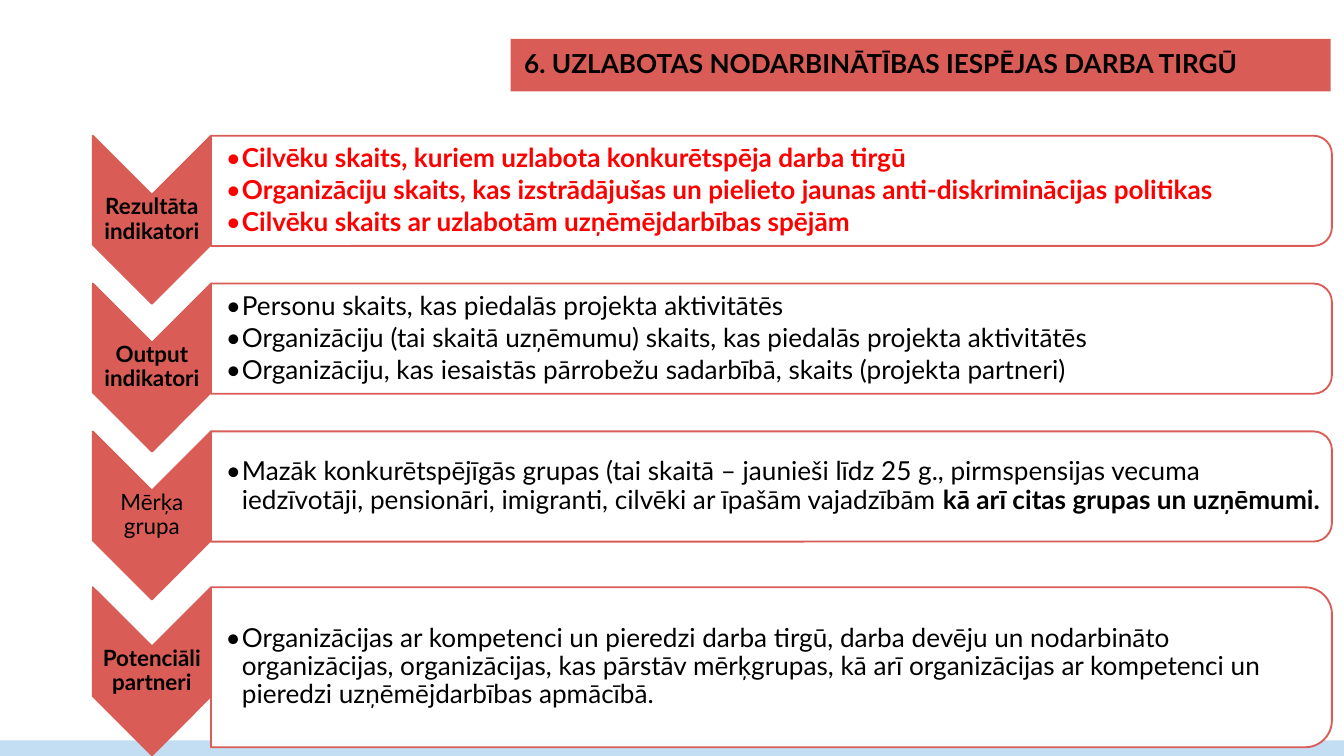
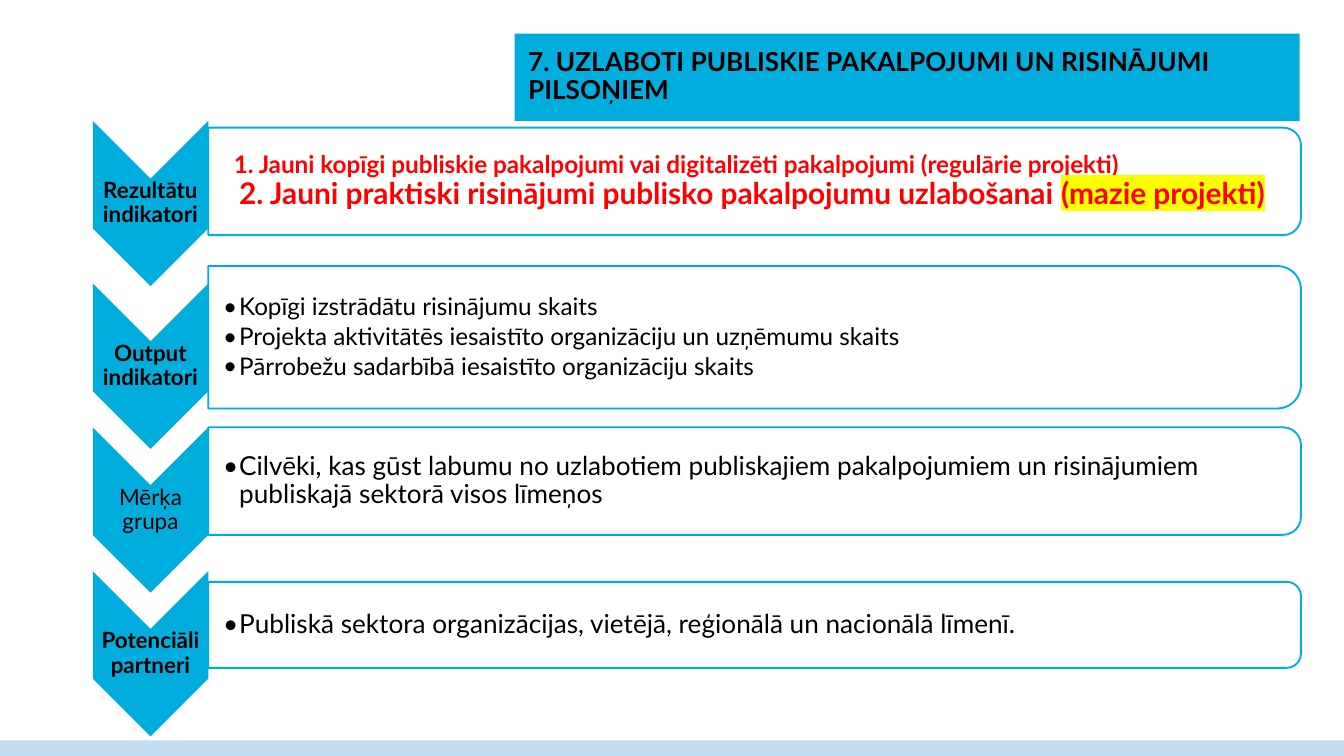
from dataclasses import dataclass

from lxml.etree import SubElement
from pptx import Presentation
from pptx.dml.color import RGBColor
from pptx.enum.shapes import MSO_SHAPE
from pptx.enum.text import MSO_ANCHOR, MSO_AUTO_SIZE, PP_ALIGN
from pptx.oxml import parse_xml
from pptx.oxml.ns import nsdecls, qn
from pptx.util import Inches, Pt

FONT = "Lato"
BLACK, WHITE, RED, YELLOW = "000000", "FFFFFF", "FF0000", "FFFF00"
CORAL, CYAN, BAND = "DA5C57", "00ADDC", "C3DEF2"
CHEVRON_LEFT = 0.69
HANGING = 0.12


@dataclass
class Run:
    """A stretch of text with its own formatting."""
    text: str
    size: float = 14
    bold: bool = False
    color: str = BLACK
    highlight: str = ""


@dataclass
class Row:
    """A chevron label and the panel beside it."""
    label: list
    chevron_top: float
    panel_top: float
    panel_height: float
    paragraphs: list
    label_bold: bool = True
    bulleted: bool = True


@dataclass
class Design:
    """The colour and the measures of one slide."""
    color: str
    title_box: tuple
    chevron_size: tuple
    panel_width: float
    outlined_chevrons: bool


def rgb(color):
    """Turn a hex string into a colour."""
    return RGBColor.from_string(color)


def add_run(paragraph, run):
    """Append one formatted run to a paragraph."""
    text_run = paragraph.add_run()
    text_run.text = run.text
    font = text_run.font
    font.name, font.size, font.bold = FONT, Pt(run.size), run.bold
    font.color.rgb = rgb(run.color)
    if run.highlight:
        fill = font._element.find(qn("a:solidFill"))
        fill.addnext(parse_xml(
            f'<a:highlight {nsdecls("a")}><a:srgbClr val="{run.highlight}"/></a:highlight>'))


def write_lines(paragraph, lines):
    """Write lists of runs, one list per line, into one paragraph."""
    for number, runs in enumerate(lines):
        if number:
            paragraph.add_line_break()
        for run in runs:
            add_run(paragraph, run)


def space_paragraph(paragraph, size, share):
    """Set tight lines and a gap after, as a share of the text size."""
    paragraph.line_spacing = 0.9
    paragraph.space_after = Pt(round(size * share, 1))


def indent(paragraph, first_line, bulleted):
    """Give a paragraph its hanging indent and, if wanted, a bullet."""
    properties = paragraph._p.get_or_add_pPr()
    properties.set("marL", str(Inches(HANGING)))
    properties.set("indent", str(Inches(first_line)))
    if bulleted:
        SubElement(properties, qn("a:buFont"), typeface=FONT)
        SubElement(properties, qn("a:buChar"), char="•")


def prepare_frame(frame, left_inset, inset):
    """Wrap a text frame, centre it vertically and set its margins."""
    frame.word_wrap = True
    frame.auto_size = MSO_AUTO_SIZE.NONE
    frame.vertical_anchor = MSO_ANCHOR.MIDDLE
    frame.margin_left = Inches(left_inset)
    frame.margin_right = frame.margin_top = frame.margin_bottom = Inches(inset)


def add_text_frame(slide, box, left_inset):
    """Add a text box and return its prepared frame."""
    frame = slide.shapes.add_textbox(*map(Inches, box)).text_frame
    prepare_frame(frame, left_inset, 0.01)
    return frame


def add_filled(slide, kind, box, fill, line=None):
    """Add a flat preset shape."""
    shape = slide.shapes.add_shape(kind, *map(Inches, box))
    shape.shadow.inherit = False
    shape.fill.solid()
    shape.fill.fore_color.rgb = rgb(fill)
    if line:
        shape.line.color.rgb = rgb(line)
        shape.line.width = Pt(1)
    else:
        shape.line.fill.background()
    return shape


def add_quarter_turned(slide, kind, box, fill, line=None):
    """Add a shape turned by 90 degrees that covers the given box."""
    left, top, width, height = box
    shift = (width - height) / 2
    turned_box = (left + shift, top - shift, height, width)
    shape = add_filled(slide, kind, turned_box, fill, line)
    shape.rotation = 90
    return shape


def add_chevron(slide, box, row, design):
    """Draw the downward chevron with its label."""
    left, top, width, height = box
    line = design.color if design.outlined_chevrons else None
    add_quarter_turned(slide, MSO_SHAPE.CHEVRON, box, design.color, line)
    frame = add_text_frame(slide, (left, top + width / 2, width, height - width), 0.01)
    paragraph = frame.paragraphs[0]
    paragraph.alignment = PP_ALIGN.CENTER
    space_paragraph(paragraph, 12, 0.35)
    write_lines(paragraph, [[Run(text, 12, row.label_bold)] for text in row.label])


def add_panel(slide, box, row, design):
    """Draw the rounded panel with its paragraphs."""
    left, top, width, height = box
    panel = add_quarter_turned(
        slide, MSO_SHAPE.ROUND_2_SAME_RECTANGLE, box, WHITE, design.color)
    color = panel.fill._xPr.find(qn("a:solidFill"))[0]
    SubElement(color, qn("a:alpha"), val="90000")
    inset = 0.05 * height
    frame = add_text_frame(
        slide, (left, top + inset, width - inset, height - 2 * inset), 0.11)
    for number, lines in enumerate(row.paragraphs):
        paragraph = frame.add_paragraph() if number else frame.paragraphs[0]
        paragraph.level = 1
        space_paragraph(paragraph, lines[0][0].size, 0.15)
        indent(paragraph, -HANGING if row.bulleted else -0.04, row.bulleted)
        write_lines(paragraph, lines)


def add_title(slide, text, design):
    """Place the title as a coloured bar."""
    title = slide.shapes.title
    title.left, title.top, title.width, title.height = map(Inches, design.title_box)
    title.fill.solid()
    title.fill.fore_color.rgb = rgb(design.color)
    prepare_frame(title.text_frame, 0.1, 0.1)
    paragraph = title.text_frame.paragraphs[0]
    paragraph.alignment = PP_ALIGN.LEFT
    space_paragraph(paragraph, 14, 0.35)
    add_run(paragraph, Run(text, bold=True))


def add_priority_slide(presentation, title, design, rows):
    """Build a slide with a title bar, a bottom band and chevron rows."""
    slide = presentation.slides.add_slide(presentation.slide_layouts[5])
    add_filled(slide, MSO_SHAPE.RECTANGLE, (0, 5.51, 10, 0.13), BAND)
    add_title(slide, title, design)
    chevron_width, chevron_height = design.chevron_size
    panel_left = CHEVRON_LEFT + chevron_width
    for row in rows:
        add_chevron(slide, (CHEVRON_LEFT, row.chevron_top, chevron_width, chevron_height),
                    row, design)
        add_panel(slide, (panel_left, row.panel_top, design.panel_width, row.panel_height),
                  row, design)


def plain(*texts, **style):
    """Make one single-run paragraph from each text."""
    return [[[Run(text, **style)]] for text in texts]


def employment_rows():
    """List the rows of the employment slide."""
    return [
        Row(["Rezultāta indikatori"], 1.01, 1.01, 0.82, plain(
            "Cilvēku skaits, kuriem uzlabota konkurētspēja darba tirgū",
            "Organizāciju skaits, kas izstrādājušas un pielieto jaunas "
            "anti-diskriminācijas politikas",
            "Cilvēku skaits ar uzlabotām uzņēmējdarbības spējām",
            bold=True, color=RED)),
        Row(["Output indikatori"], 2.11, 2.11, 0.82, plain(
            "Personu skaits, kas piedalās projekta aktivitātēs",
            "Organizāciju (tai skaitā uzņēmumu) skaits, kas piedalās projekta aktivitātēs",
            "Organizāciju, kas iesaistās pārrobežu sadarbībā, skaits (projekta partneri)")),
        Row(["Mērķa grupa"], 3.21, 3.21, 0.82, [[[
            Run("Mazāk konkurētspējīgās grupas (tai skaitā – jaunieši līdz 25 g., "
                "pirmspensijas vecuma iedzīvotāji, pensionāri, imigranti, "
                "cilvēki ar īpašām vajadzībām "),
            Run("kā arī citas grupas un uzņēmumi.", bold=True)]]], label_bold=False),
        Row(["Potenciāli", "partneri"], 4.37, 4.37, 1.19, plain(
            "Organizācijas ar kompetenci un pieredzi darba tirgū, darba devēju un "
            "nodarbināto organizācijas, organizācijas, kas pārstāv mērķgrupas, kā arī "
            "organizācijas ar kompetenci un pieredzi uzņēmējdarbības apmācībā.")),
    ]


def service_rows():
    """List the rows of the public services slide."""
    return [
        Row(["Rezultātu indikatori"], 0.9, 0.95, 0.8, [[
            [Run("1. Jauni kopīgi publiskie pakalpojumi vai digitalizēti pakalpojumi "
                 "(regulārie projekti)", 13, True, RED)],
            [Run("2. Jauni praktiski risinājumi publisko pakalpojumu uzlabošanai ",
                 16, True, RED),
             Run("(mazie projekti)", 16, True, RED, YELLOW)]]], bulleted=False),
        Row(["Output indikatori"], 2.11, 1.98, 1.06, plain(
            "Kopīgi izstrādātu risinājumu skaits",
            "Projekta aktivitātēs iesaistīto organizāciju un uzņēmumu skaits",
            "Pārrobežu sadarbībā iesaistīto organizāciju skaits", size=13)),
        Row(["Mērķa grupa"], 3.18, 3.18, 0.8, plain(
            "Cilvēki, kas gūst labumu no uzlabotiem publiskajiem pakalpojumiem un "
            "risinājumiem publiskajā sektorā visos līmeņos"), label_bold=False),
        Row(["Potenciāli", "partneri"], 4.25, 4.33, 0.64, plain(
            "Publiskā sektora organizācijas, vietējā, reģionālā un nacionālā līmenī.")),
    ]


def main():
    """Build and save the presentation."""
    presentation = Presentation()
    presentation.slide_width = Inches(10)
    presentation.slide_height = Inches(10 * 9 / 16)
    add_priority_slide(
        presentation, "6. UZLABOTAS NODARBINĀTĪBAS IESPĒJAS DARBA TIRGŪ",
        Design(CORAL, (3.8, 0.29, 6.1, 0.39), (0.88, 1.25), 8.34, True), employment_rows())
    add_priority_slide(
        presentation, "7. UZLABOTI PUBLISKIE PAKALPOJUMI UN RISINĀJUMI PILSOŅIEM",
        Design(CYAN, (3.83, 0.25, 5.84, 0.65), (0.86, 1.23), 8.13, False), service_rows())
    presentation.save("out.pptx")


if __name__ == "__main__":
    main()
